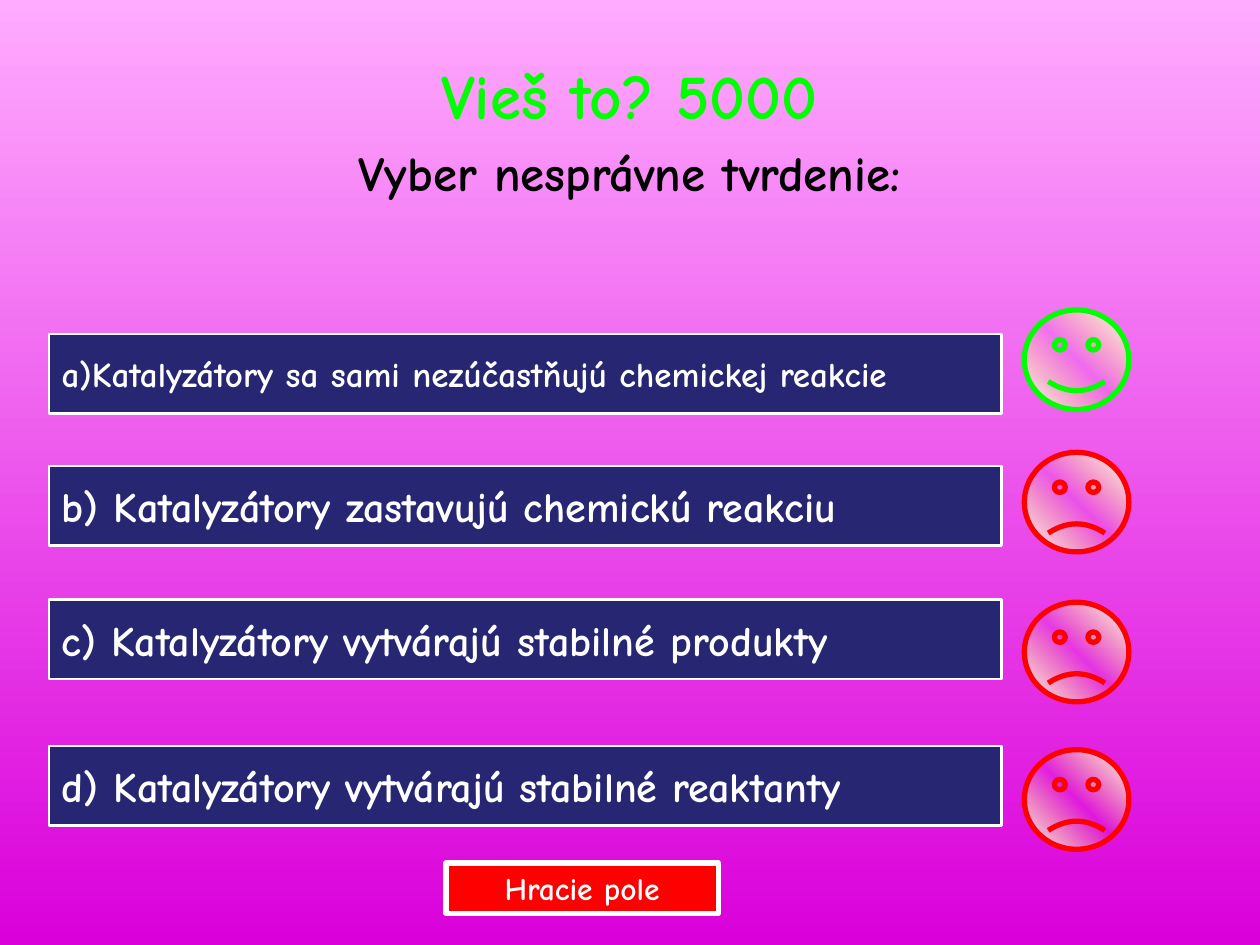
from copy import deepcopy

from pptx import Presentation
from pptx.dml.color import RGBColor
from pptx.enum.shapes import MSO_SHAPE
from pptx.enum.text import MSO_ANCHOR, MSO_AUTO_SIZE, PP_ALIGN
from pptx.oxml.ns import qn
from pptx.util import Inches, Pt

COLORS = {
    "sky": "FFABFF", "ground": "DA00DA", "navy": "262673", "white": "FFFFFF",
    "yellow": "FFFF66", "green": "00FF00", "red": "FF0000", "black": "000000",
}
FONT = "Comic Neue"
HEADINGS = [("Vieš to? 5000", 36, "green"),
            ("Vyber nesprávne tvrdenie:", 28, "black")]
# text, size, top of the bar, top of the face, colour of the face
ANSWERS = [
    ("a)Katalyzátory sa sami nezúčastňujú chemickej reakcie", 20, 2.65, 2.46, "green"),
    ("b) Katalyzátory zastavujú chemickú reakciu", 24, 3.7, 3.59, "red"),
    ("c) Katalyzátory vytvárajú stabilné produkty", 24, 4.76, 4.78, "red"),
    ("d) Katalyzátory vytvárajú stabilné reaktanty", 24, 5.92, 5.95, "red"),
]


def rgb(name):
    return RGBColor.from_string(COLORS[name])


def set_text(p, text, size, color, align):
    p.alignment = align
    r = p.add_run()
    r.text = text
    for key, value in {"name": FONT, "size": Pt(size), "bold": True}.items():
        setattr(r.font, key, value)
    r.font.color.rgb = rgb(color)


def set_gradient(fill, first, last, angle):
    """Two-stop gradient; the angle runs counter-clockwise."""
    fill.gradient()
    fill.gradient_angle = angle
    for stop, color in zip(fill.gradient_stops, (first, last)):
        stop.color.rgb = rgb(color)


def add_outlined(slide, kind, box, line, width):
    sp = slide.shapes.add_shape(kind, *map(Inches, box))
    sp.shadow.inherit = False
    sp.line.color.rgb = rgb(line)
    sp.line.width = Pt(width)
    return sp


def add_title(slide):
    title = slide.shapes.title
    box = {"left": 0.39, "top": 0.4, "width": 9.21, "height": 0.75}
    for key, value in box.items():
        setattr(title, key, Inches(value))
    tf = title.text_frame
    tf.vertical_anchor = MSO_ANCHOR.TOP
    tf.auto_size = MSO_AUTO_SIZE.NONE
    for i, (text, size, color) in enumerate(HEADINGS):
        p = tf.add_paragraph() if i else tf.paragraphs[0]
        p.space_before = Pt(0.2 * size)
        set_text(p, text, size, color, PP_ALIGN.CENTER)


def add_button(slide, box, text, size, fill, width, align):
    sp = add_outlined(slide, MSO_SHAPE.ACTION_BUTTON_CUSTOM, box, "white", width)
    sp.fill.solid()
    sp.fill.fore_color.rgb = rgb(fill)
    tf = sp.text_frame
    tf.word_wrap = False
    tf.vertical_anchor = MSO_ANCHOR.MIDDLE
    set_text(tf.paragraphs[0], text, size, color="white", align=align)


def add_face(slide, top, color):
    """Smiling when green, frowning when red, with a see-through middle."""
    sp = add_outlined(slide, MSO_SHAPE.SMILEY_FACE, (8.13, top, 0.83, 0.79), color, 3)
    sp.adjustments[0] = 0.047 if color == "green" else -0.047
    set_gradient(sp.fill, "white", "white", 45)
    stops = sp._element.spPr.find(".//" + qn("a:gsLst"))
    middle = deepcopy(stops[0])
    middle.set("pos", "50000")
    middle[0].set("val", COLORS["yellow"])
    alpha = middle[0].makeelement(qn("a:alpha"), {"val": "0"})
    middle[0].append(alpha)
    stops.insert(1, middle)


def main():
    prs = Presentation()
    prs.slide_width, prs.slide_height = Inches(10), Inches(7.5)
    slide = prs.slides.add_slide(prs.slide_layouts[5])
    set_gradient(slide.background.fill, "sky", "ground", 270)
    add_title(slide)
    for text, size, bar_top, face_top, face_color in ANSWERS:
        add_button(slide, (0.39, bar_top, 7.56, 0.63), text, size, "navy", 1.5,
                   PP_ALIGN.LEFT)
        add_face(slide, face_top, face_color)
    add_button(slide, (3.54, 6.85, 2.16, 0.4), "Hracie pole", 18, "red", 3,
               PP_ALIGN.CENTER)
    prs.save("out.pptx")


if __name__ == "__main__":
    main()
